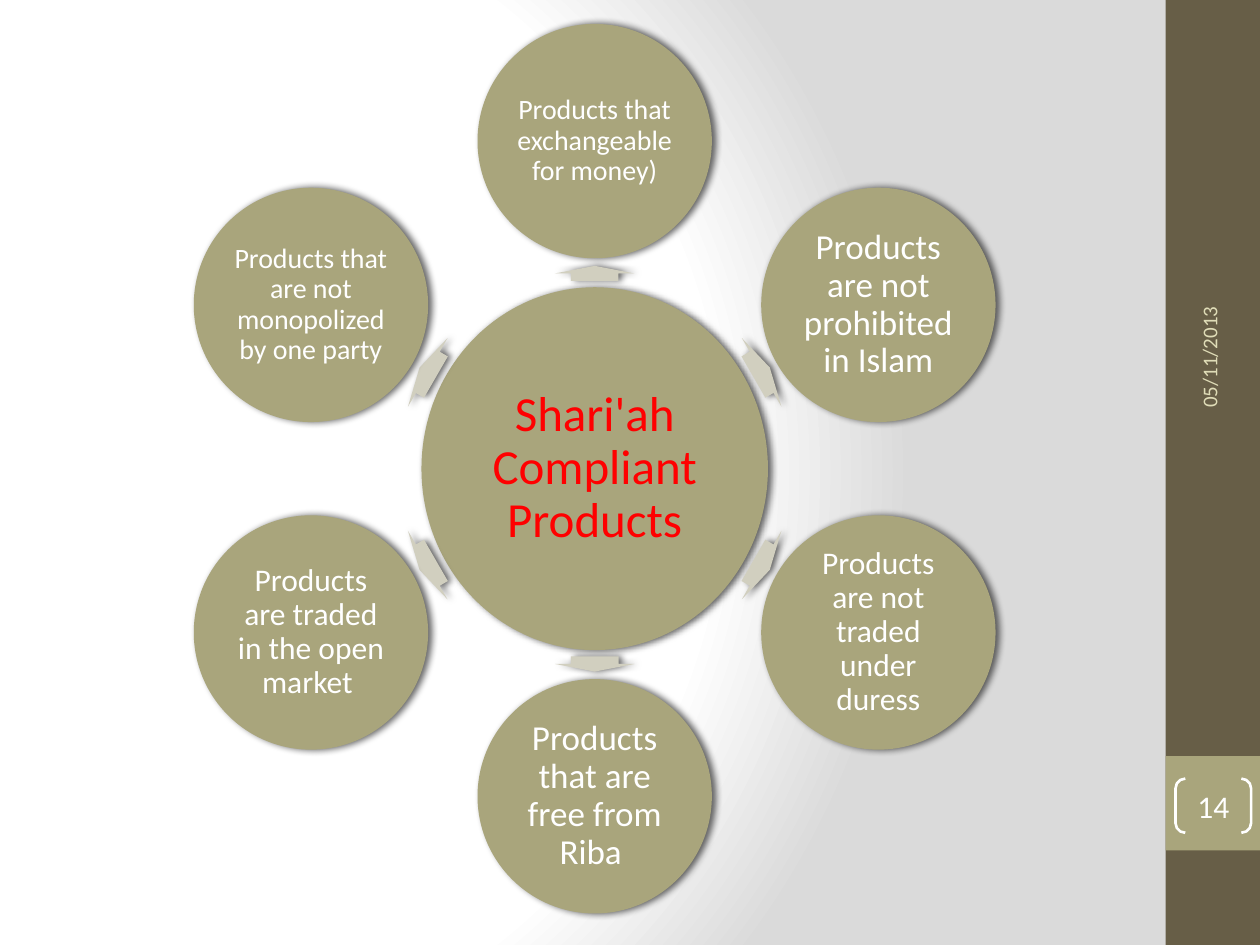
from dataclasses import dataclass
from math import cos, radians, sin

from lxml import etree
from pptx import Presentation
from pptx.dml.color import RGBColor
from pptx.enum.shapes import MSO_SHAPE
from pptx.enum.text import MSO_ANCHOR, PP_ALIGN
from pptx.oxml import parse_xml
from pptx.oxml.ns import qn
from pptx.util import Inches, Pt

RECT, OVAL = MSO_SHAPE.RECTANGLE, MSO_SHAPE.OVAL
ARROW, BRACKETS = MSO_SHAPE.RIGHT_ARROW, MSO_SHAPE.DOUBLE_BRACKET
CENTER, LEFT, MIDDLE = PP_ALIGN.CENTER, PP_ALIGN.LEFT, MSO_ANCHOR.MIDDLE

BROWN = RGBColor(0x67, 0x5E, 0x47)
OLIVE = RGBColor(0xA9, 0xA5, 0x7C)
PALE = RGBColor(0xD1, 0xCF, 0xBF)
CREAM = RGBColor(0xDF, 0xDC, 0xB7)
WHITE = RGBColor(0xFF, 0xFF, 0xFF)
RED = RGBColor(0xFF, 0x00, 0x00)
GREY = RGBColor(0xDA, 0xDA, 0xDA)

FONT = "Calibri"
A_NS = "http://schemas.openxmlformats.org/drawingml/2006/main"
CX, CY = 4.72, 3.72     # centre of the wheel
ORBIT = 2.6             # from the centre to each outer circle
CIRCLE = 1.86


@dataclass
class Product:
    text: str
    size: int
    inset: float = 0.03


# Clockwise from the top
PRODUCTS = [
    Product("Products that exchangeable for money)", 16, 0.02),
    Product("Products are not prohibited in Islam", 20),
    Product("Products are not traded under duress", 18),
    Product("Products that are free from Riba ", 20),
    Product("Products are traded in the open market ", 18),
    Product("Products that are not monopolized by one party", 16, 0.02),
]


def set_background(s) -> None:
    s.background.fill.gradient()
    old = s.element.find(".//" + qn("a:gradFill"))
    stops = "".join(
        f'<a:gs pos="{pos}"><a:srgbClr val="{color}"/></a:gs>'
        for pos, color in ((0, WHITE), (75000, WHITE), (100000, GREY)))
    old.getparent().replace(old, parse_xml(
        f'<a:gradFill xmlns:a="{A_NS}" rotWithShape="1"><a:gsLst>{stops}</a:gsLst>'
        '<a:path path="circle"><a:fillToRect l="20000" t="50000" r="100000" b="50000"/>'
        '</a:path></a:gradFill>'))


def add_shape(s, kind, x: float, y: float, w: float, h: float, fill=None):
    sp = s.shapes.add_shape(kind, Inches(x), Inches(y), Inches(w), Inches(h))
    sp.shadow.inherit = False
    sp.line.fill.background()
    if fill is None:
        sp.fill.background()
    else:
        sp.fill.solid()
        sp.fill.fore_color.rgb = fill
    return sp


def add_centered(s, kind, x: float, y: float, w: float, h: float, fill):
    """Shape placed by its centre, with a soft shadow to the right."""
    sp = add_shape(s, kind, x - w / 2, y - h / 2, w, h, fill)
    effects = sp.element.spPr.find(qn("a:effectLst"))
    shadow = etree.SubElement(effects, qn("a:outerShdw"), blurRad=str(Pt(4)),
                              dist=str(Pt(2)), dir="0", rotWithShape="0")
    color = etree.SubElement(shadow, qn("a:srgbClr"), val="000000")
    etree.SubElement(color, qn("a:alpha"), val="60000")
    return sp


def set_text(sp, text: str, size: int, color, align=CENTER, inset=None, spacing=None) -> None:
    tf = sp.text_frame
    tf.word_wrap = True
    tf.vertical_anchor = MIDDLE
    if inset is not None:
        tf.margin_left = tf.margin_right = Inches(inset)
        tf.margin_top = tf.margin_bottom = Inches(inset)
    p = tf.paragraphs[0]
    p.text = text
    p.alignment = align
    p.line_spacing = spacing
    font = p.runs[0].font
    font.name, font.size, font.color.rgb = FONT, Pt(size), color


def add_product(s, index: int, product: Product) -> None:
    angle = -90 + 60 * index
    dx, dy = cos(radians(angle)), sin(radians(angle))
    upright = index % 3 == 0
    length, reach = (0.12, 1.55) if upright else (0.15, 1.53)
    arrow = add_centered(s, ARROW, CX + reach * dx, CY + reach * dy, length, 0.63, PALE)
    arrow.adjustments[0], arrow.adjustments[1] = 0.6, 0.5
    arrow.rotation = angle % 360
    circle = add_centered(s, OVAL, CX + ORBIT * dx, CY + ORBIT * dy, CIRCLE, CIRCLE, OLIVE)
    set_text(circle, product.text, product.size, WHITE, inset=product.inset, spacing=0.9)


def main() -> None:
    prs = Presentation()
    prs.slide_width, prs.slide_height = Inches(10), Inches(7.5)
    s = prs.slides.add_slide(prs.slide_layouts[6])
    set_background(s)

    # Side band
    add_shape(s, RECT, 9.25, 0, 0.75, 7.5, BROWN)
    add_shape(s, RECT, 9.25, 6, 0.75, 0.75, OLIVE)

    # Wheel
    hub = add_centered(s, OVAL, CX, CY, 2.75, 2.88, OLIVE)
    set_text(hub, "Shari'ah Compliant Products", 28, RED, inset=0.04, spacing=0.9)
    for index, product in enumerate(PRODUCTS):
        add_product(s, index, product)

    # Slide number
    number = add_shape(s, BRACKETS, 9.33, 6.18, 0.6, 0.43)
    number.adjustments[0] = 0.18
    number.line.color.rgb = WHITE
    number.line.width = Pt(1.5)
    set_text(number, "14", 18, WHITE, inset=0)

    # Date
    date = s.shapes.add_textbox(Inches(8.26), Inches(1.8), Inches(2.67), Inches(0.4))
    date.rotation = 270
    set_text(date, "05/11/2013", 12, CREAM, align=LEFT)

    prs.save("out.pptx")


if __name__ == "__main__":
    main()
